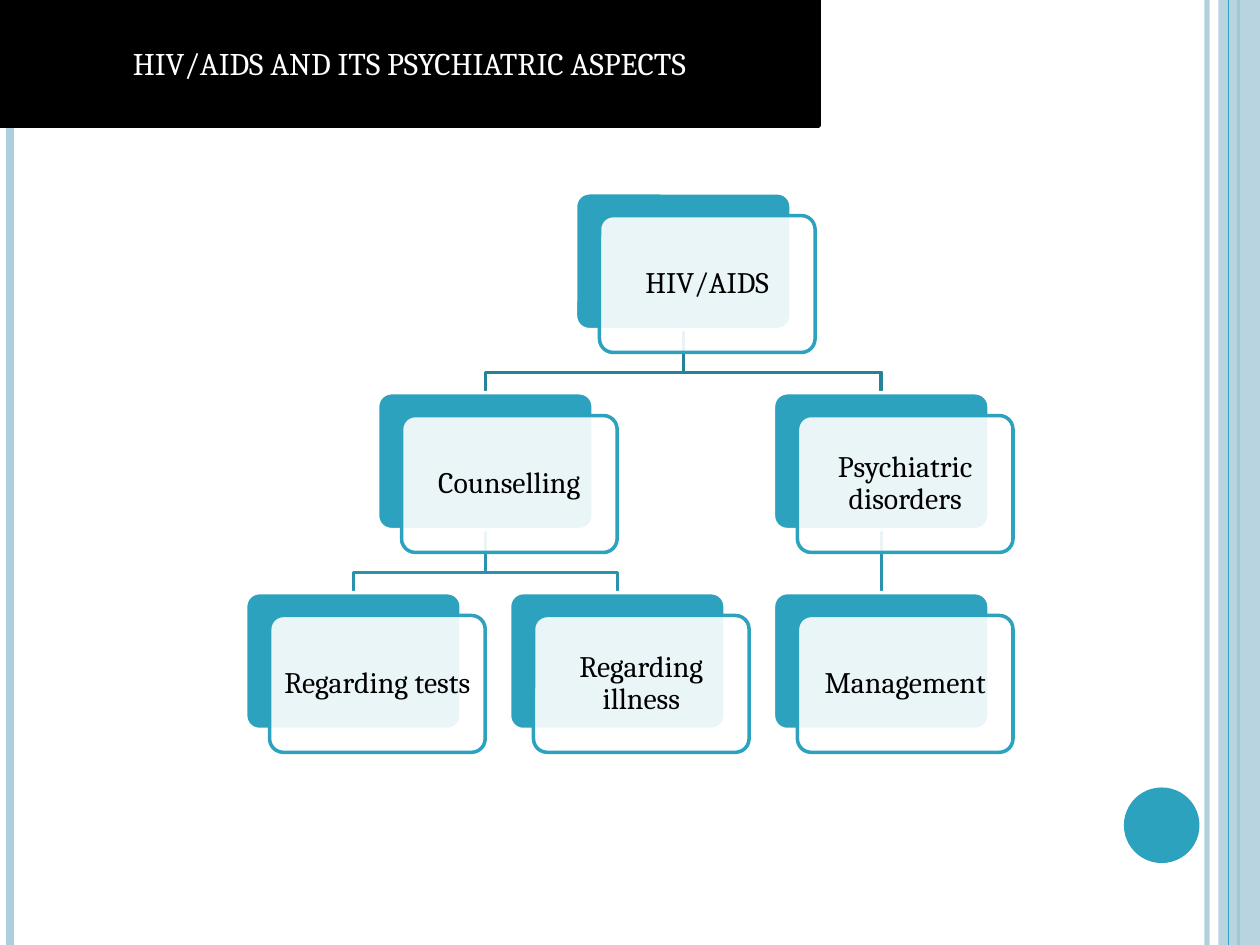
from lxml.etree import SubElement
from pptx import Presentation
from pptx.dml.color import RGBColor
from pptx.enum.shapes import MSO_CONNECTOR, MSO_SHAPE
from pptx.enum.text import MSO_ANCHOR, MSO_AUTO_SIZE, PP_ALIGN
from pptx.oxml.ns import qn
from pptx.util import Inches, Pt

WIDTH, HEIGHT = Inches(10), Inches(7.5)
TEAL, PALE, WHITE, BLACK = "2DA2BF", "ADCEDC", "FFFFFF", "000000"
BRANCH_COLORS = {0: "248299", 1: "2993AD"}

# Topic: (column, row, parent)
TOPICS = {
    "HIV/AIDS": (1.25, 0, None),
    "Counselling": (0.5, 1, "HIV/AIDS"),
    "Regarding tests": (0, 2, "Counselling"),
    "Regarding illness": (1, 2, "Counselling"),
    "Psychiatric disorders": (2, 1, "HIV/AIDS"),
    "Management": (2, 2, "Psychiatric disorders"),
}


def paint(color_format, color, opacity=100):
    """Set a colour from a hex string, with opacity in percent."""
    color_format.rgb = RGBColor.from_string(color)
    if opacity < 100:
        solid = color_format._xFill
        SubElement(solid[0], qn("a:alpha"), val=str(opacity * 1000))


def paint_fill(shape, color, opacity=100):
    shape.fill.solid()
    paint(shape.fill.fore_color, color, opacity)


def paint_line(shape, color, weight, opacity=100):
    shape.line.fill.solid()
    paint(shape.line.fill.fore_color, color, opacity)
    shape.line.width = Pt(weight)


def write(shape, text, size, color, inset=None, spacing=None):
    frame = shape.text_frame
    frame.text = text
    frame.word_wrap = True
    frame.auto_size = MSO_AUTO_SIZE.NONE
    frame.vertical_anchor = MSO_ANCHOR.MIDDLE
    if inset is not None:
        frame.margin_left = frame.margin_right = inset
        frame.margin_top = frame.margin_bottom = inset
    paragraph = frame.paragraphs[0]
    paragraph.alignment = PP_ALIGN.CENTER
    paragraph.line_spacing = spacing
    font = paragraph.runs[0].font
    font.name, font.size = "Cambria", Pt(size)
    paint(font.color, color)


def add_block(slide, kind, box, color, opacity=100, outline=None, corner=None):
    block = slide.shapes.add_shape(kind, *map(int, box))
    block.shadow.inherit = False
    paint_fill(block, color, opacity)
    if outline:
        paint_line(block, outline, 2)
    else:
        block.line.fill.background()
    if corner is not None:
        block.adjustments[0] = corner
    return block


def add_rule(slide, start, end, color, weight, opacity=100):
    rule = slide.shapes.add_connector(MSO_CONNECTOR.STRAIGHT, *map(int, start + end))
    paint_line(rule, color, weight, opacity)
    SubElement(rule._element.spPr, qn("a:effectLst"))


def add_side_bands(slide):
    def add_vertical(x, *style):
        add_rule(slide, (Inches(x), 0), (Inches(x), HEIGHT), *style)

    add_vertical(9.58, PALE, 3, 93)
    add_vertical(0.08, PALE, 4.5)
    add_vertical(9.83, TEAL, 1.5)
    band = Inches(0.33)
    add_block(slide, MSO_SHAPE.RECTANGLE, (WIDTH - band, 0, band, HEIGHT), PALE, 87)
    add_vertical(9.75, TEAL, 0.75)
    disc = Inches(0.6)
    add_block(slide, MSO_SHAPE.OVAL, (Inches(8.92), Inches(6.25), disc, disc), TEAL)


def add_branch(slide, start, end, color):
    """Join a parent's foot to a child's head, turning two thirds of the way."""
    (x1, y1), (x2, y2) = start, end
    if abs(x1 - x2) < Pt(1):
        add_rule(slide, start, end, color, 2)
        return
    turn = y1 + (y2 - y1) * 0.68
    builder = slide.shapes.build_freeform(int(x1), int(y1))
    corners = [(x1, turn), (x2, turn), (x2, y2)]
    builder.add_line_segments([(int(x), int(y)) for x, y in corners], close=False)
    branch = builder.convert_to_shape()
    branch.shadow.inherit = False
    branch.fill.background()
    paint_line(branch, color, 2)


def add_card(slide, topic, box):
    """A teal plate with a translucent labelled card set off from it."""
    left, top, width, height = box
    add_block(slide, MSO_SHAPE.ROUNDED_RECTANGLE, box, TEAL, outline=WHITE, corner=0.1)
    front = (left + width / 9, top + height / 6, width, height)
    card = add_block(slide, MSO_SHAPE.ROUNDED_RECTANGLE, front, WHITE, 90,
                     outline=TEAL, corner=0.1)
    write(card, topic, 17, BLACK, inset=Inches(0.07), spacing=0.9)


def add_topic_tree(slide, box):
    """Place the cards on a grid of three columns and three rows."""
    left, top, width, height = box
    card_width, card_height = width * 0.29, height * 0.255
    column = (width - card_width) / 2
    row = (height - card_height) / 2
    corners = {topic: (left + c * column, top + r * row)
               for topic, (c, r, _) in TOPICS.items()}

    for topic, (_, _, parent) in TOPICS.items():
        if parent:
            x, y = corners[topic]
            parent_x, parent_y = corners[parent]
            add_branch(slide, (parent_x + card_width / 2, parent_y + card_height),
                       (x + card_width / 2, y), BRANCH_COLORS[TOPICS[parent][1]])
    for topic, corner in corners.items():
        add_card(slide, topic, corner + (card_width, card_height))


def add_title(slide, box):
    title = slide.shapes.title
    title.left, title.top, title.width, title.height = map(int, box)
    shape_properties = title._element.spPr
    outline = SubElement(shape_properties, qn("a:prstGeom"), prst="roundRect")
    SubElement(outline, qn("a:avLst"))
    paint_fill(title, BLACK)
    paint_line(title, BLACK, 2)
    write(title, "HIV/AIDS AND ITS PSYCHIATRIC ASPECTS", 18, WHITE)
    slide.shapes._spTree.append(title._element)  # in front of the side bands


def main():
    deck = Presentation()
    deck.slide_width, deck.slide_height = WIDTH, HEIGHT
    slide = deck.slides.add_slide(deck.slide_layouts[5])
    add_side_bands(slide)
    add_topic_tree(slide, (Inches(1.95), Inches(1.53), Inches(5.9), Inches(4.26)))
    add_title(slide, (0, 0, Inches(6.5), Inches(1)))
    deck.save("out.pptx")


if __name__ == "__main__":
    main()
